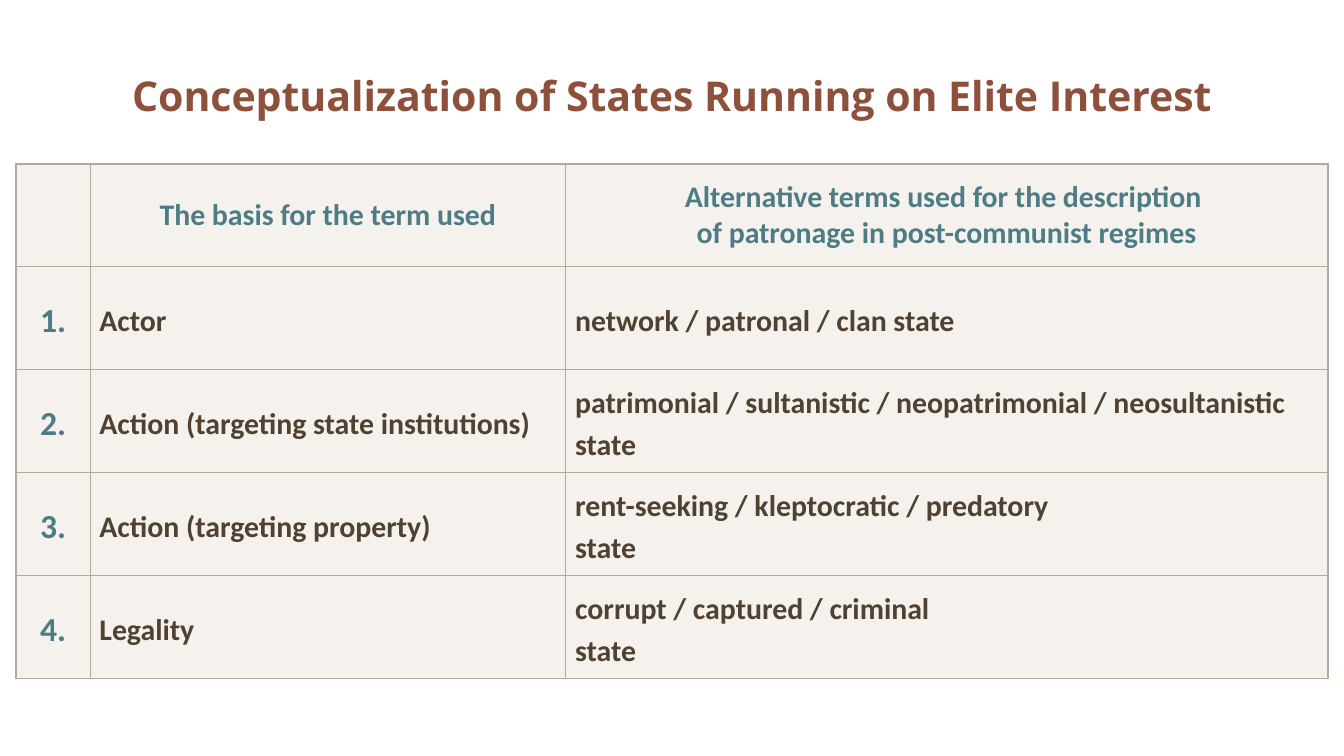
from dataclasses import dataclass

from lxml.etree import SubElement
from pptx import Presentation
from pptx.dml.color import RGBColor
from pptx.enum.text import MSO_ANCHOR, PP_ALIGN
from pptx.oxml import parse_xml
from pptx.oxml.ns import nsdecls, qn
from pptx.util import Inches, Pt

BROWN = RGBColor(0x8D, 0x50, 0x3B)
TEAL = RGBColor(0x4D, 0x7C, 0x85)
DARK = RGBColor(0x50, 0x41, 0x31)
SAND = RGBColor(0xEF, 0xEA, 0xE4)
RULE = RGBColor(0xB3, 0xA9, 0x9D)

WIDE = Inches(10)
TALL = Inches(10 * 9 / 16)
WIDTHS = (0.55, 3.54, 5.67)
HEIGHT = 3.83


@dataclass
class Row:
    label: str
    basis: str
    terms: str


HEAD = Row(
    "",
    "The basis for the term used",
    "Alternative terms used for the description \nof patronage in post-communist regimes",
)
ROWS = [
    Row("1.", "Actor", "network / patronal / clan state"),
    Row("2.", "Action (targeting state institutions)",
        "patrimonial / sultanistic / neopatrimonial / neosultanistic state"),
    Row("3.", "Action (targeting property)",
        "rent-seeking / kleptocratic / predatory\nstate"),
    Row("4.", "Legality", "corrupt / captured / criminal\nstate"),
]


def write(frame, text: str, *, size=16, color=DARK, font="Calibri",
          align=PP_ALIGN.LEFT, spacing=1.0) -> None:
    """Fill a text frame with bold text, one paragraph for each line."""
    frame.word_wrap = True
    frame.text = text
    for para in frame.paragraphs:
        para.alignment = align
        para.line_spacing = spacing
        for run in para.runs:
            run.font.name = font
            run.font.size = Pt(size)
            run.font.bold = True
            run.font.color.rgb = color


def style(cell, edges: dict[str, bool]) -> None:
    """Set see-through fill, margins and borders; outer edges are thicker."""
    cell.vertical_anchor = MSO_ANCHOR.MIDDLE
    cell.margin_left = cell.margin_right = Inches(0.07)
    cell.margin_top = cell.margin_bottom = 0
    cell.fill.solid()
    cell.fill.fore_color.rgb = SAND
    props = cell._tc.get_or_add_tcPr()
    tint = props.find(".//" + qn("a:srgbClr"))
    SubElement(tint, qn("a:alpha"), val="60000")
    for spot, (side, outer) in enumerate(edges.items()):
        width = Pt(1 if outer else 0.5)
        props.insert(spot, parse_xml(
            f'<a:ln{side} {nsdecls("a")} w="{width}"><a:solidFill>'
            f'<a:srgbClr val="{RULE}"/></a:solidFill></a:ln{side}>'))


def draw_table(slide) -> None:
    rows = [HEAD, *ROWS]
    last = len(rows) - 1
    table = slide.shapes.add_table(
        len(rows), len(WIDTHS), Inches(0.12), Inches(1.22),
        Inches(sum(WIDTHS)), Inches(HEIGHT)).table
    table.first_row = table.horz_banding = False
    for col, width in zip(table.columns, WIDTHS):
        col.width = Inches(width)
    for r, row in enumerate(rows):
        table.rows[r].height = Inches(HEIGHT / len(rows))
        for c, text in enumerate((row.label, row.basis, row.terms)):
            cell = table.cell(r, c)
            style(cell, {"L": c == 0, "R": c == len(WIDTHS) - 1,
                         "T": r == 0, "B": r == last})
            accent = r == 0 or c == 0
            write(cell.text_frame, text,
                  size=18 if c == 0 else 16,
                  color=TEAL if accent else DARK,
                  align=PP_ALIGN.CENTER if accent else PP_ALIGN.LEFT,
                  spacing=1.0 if r == 0 else 1.15)


def draw_title(slide) -> None:
    box = slide.shapes.add_textbox(
        Inches(0.12), Inches(0.21), Inches(9.76), Inches(1))
    box.text_frame.vertical_anchor = MSO_ANCHOR.MIDDLE
    write(box.text_frame, "Conceptualization of States Running on Elite Interest",
          size=22, color=BROWN, font="Open Sans", align=PP_ALIGN.CENTER)


def main() -> None:
    deck = Presentation()
    deck.slide_width, deck.slide_height = WIDE, TALL
    slide = deck.slides.add_slide(deck.slide_layouts[6])
    draw_title(slide)
    draw_table(slide)
    deck.save("out.pptx")


if __name__ == "__main__":
    main()
